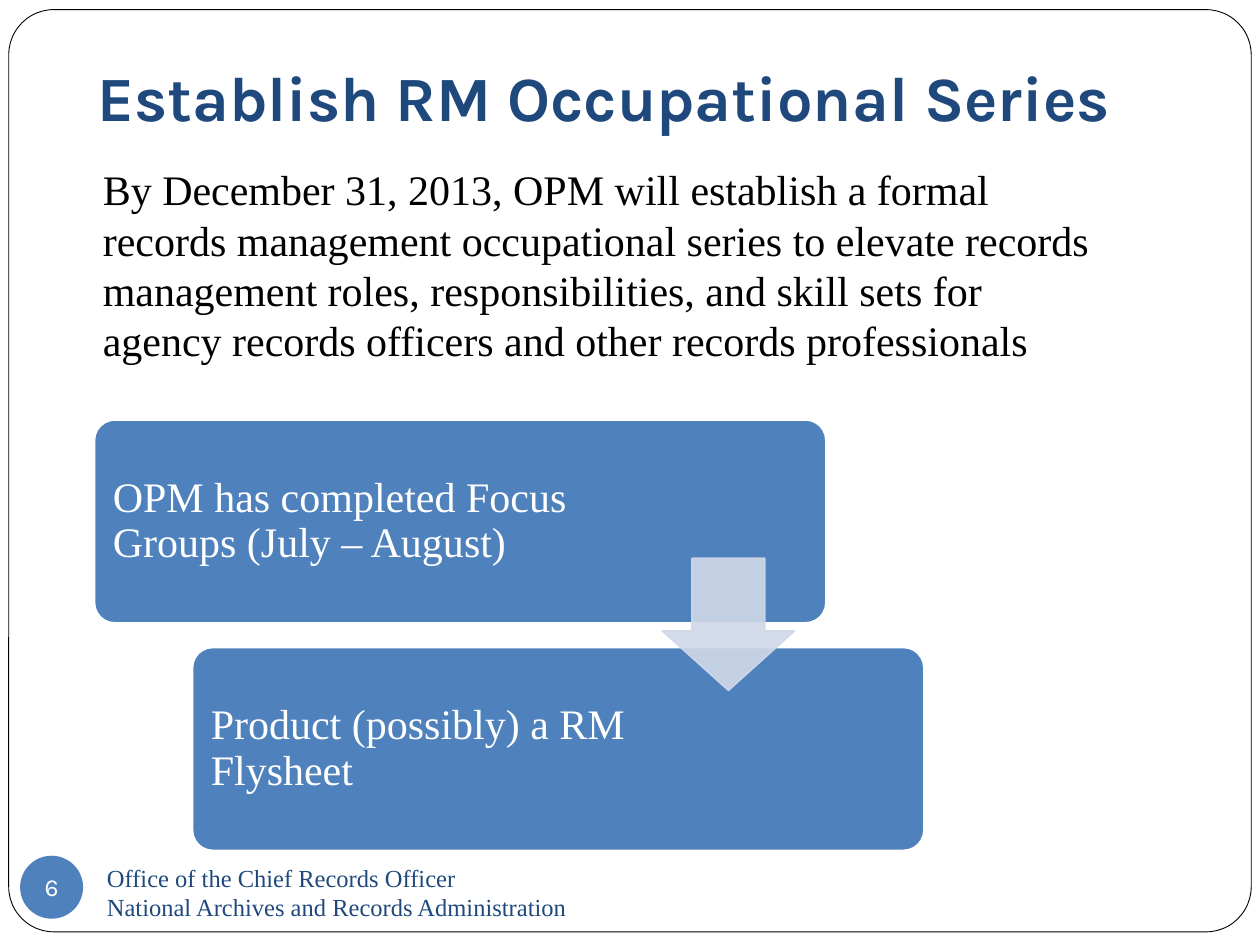
import pptx
import pptx.dml.color
import pptx.enum.shapes
import pptx.enum.text
import pptx.oxml
import pptx.oxml.ns
import pptx.util

Pt = pptx.util.Pt
RGBColor = pptx.dml.color.RGBColor
SHAPE = pptx.enum.shapes.MSO_SHAPE
ANCHOR = pptx.enum.text.MSO_ANCHOR
ALIGN = pptx.enum.text.PP_ALIGN

NAVY = RGBColor(0x1F, 0x49, 0x7D)
BLUE = RGBColor(0x4F, 0x81, 0xBD)
PALE = RGBColor(0xD0, 0xD8, 0xE8)
WHITE = RGBColor(0xFF, 0xFF, 0xFF)
BLACK = RGBColor(0, 0, 0)
SERIF = "Times New Roman"
SANS = "Karla"

deck = pptx.Presentation()
deck.slide_width, deck.slide_height = Pt(720), Pt(540)
page = deck.slides.add_slide(deck.slide_layouts[6])


def add_figure(kind, bounds, fill, line=None, width=1, adjust=()):
    figure = page.shapes.add_shape(kind, *map(Pt, bounds))
    figure.shadow.inherit = False
    figure.fill.solid()
    figure.fill.fore_color.rgb = fill
    if line is None:
        figure.line.fill.background()
    else:
        figure.line.color.rgb = line
        figure.line.width = Pt(width)
    for index, value in enumerate(adjust):
        figure.adjustments[index] = value
    return figure


def write(box, lines, size, font, color, frame_format, para_format=None, bold=False):
    """Fill a shape with one paragraph per line, applying the format dicts."""
    frame = box.text_frame
    for name, value in {"word_wrap": True, **frame_format}.items():
        setattr(frame, name, value)
    frame.text = "\n".join(lines)
    for para in frame.paragraphs:
        for name, value in (para_format or {}).items():
            setattr(para, name, value)
        for span in para.runs:
            for name, value in {"size": Pt(size), "name": font, "bold": bold}.items():
                setattr(span.font, name, value)
            span.font.color.rgb = color


# Page frame, title and number
add_figure(SHAPE.ROUNDED_RECTANGLE, (5, 5.5, 710, 527), WHITE, BLACK, 0.5, [0.049])

title = page.shapes.add_textbox(Pt(48.5), Pt(-6), Pt(612), Pt(90))
write(title, ["Establish RM Occupational Series"], 36, SANS, NAVY,
      {"vertical_anchor": ANCHOR.BOTTOM, "margin_bottom": Pt(7.2)}, bold=True)

badge = add_figure(SHAPE.OVAL, (11.5, 489, 36, 36), BLUE)
no_margins = {f"margin_{side}": 0 for side in ("left", "top", "right", "bottom")}
write(badge, ["6"], 14, SANS, WHITE,
      {"vertical_anchor": ANCHOR.MIDDLE, "word_wrap": False, **no_margins},
      {"alignment": ALIGN.CENTER})

# Goal and footer
goal = page.shapes.add_textbox(Pt(30), Pt(90), Pt(612), Pt(360))
write(goal, ["By December 31, 2013, OPM will establish a formal records management "
             "occupational series to elevate records management roles, responsibilities, "
             "and skill sets for agency records officers and other records professionals"],
      24, SERIF, BLACK, {"margin_left": Pt(28.8)}, {"space_before": Pt(5.8)})

footer = page.shapes.add_textbox(Pt(54), Pt(492), Pt(312), Pt(36))
write(footer, ["Office of the Chief Records Officer",
               "National Archives and Records Administration"],
      14, SERIF, NAVY, {"vertical_anchor": ANCHOR.MIDDLE})

# Steps, each one lower and further right
STEP_WIDTH, STEP_HEIGHT = 418, 116
steps = [("OPM has completed Focus Groups (July – August)", 305),
         ("Product (possibly) a RM Flysheet", 269)]
for index, (label, text_width) in enumerate(steps):
    left, top = 54 + 56 * index, 240 + 130 * index
    step = add_figure(SHAPE.ROUNDED_RECTANGLE, (left, top, STEP_WIDTH, STEP_HEIGHT),
                      BLUE, WHITE, 1, [0.1])
    write(step, [label], 24, SERIF, WHITE,
          {"vertical_anchor": ANCHOR.MIDDLE, "margin_left": Pt(7.2),
           "margin_right": Pt(STEP_WIDTH - text_width + 7.2)},
          {"alignment": ALIGN.LEFT, "line_spacing": 0.9})

arrow = add_figure(SHAPE.DOWN_ARROW, (378.5, 319, 75.5, 75.5), PALE, PALE, 1, [0.45, 0.55])
# Down arrow: first adjustment is shaft width, second is head length
arrow.adjustments[0], arrow.adjustments[1] = 0.55, 0.45
for color in arrow._element.spPr.iter(pptx.oxml.ns.qn("a:srgbClr")):
    alpha = pptx.oxml.parse_xml(f'<a:alpha {pptx.oxml.ns.nsdecls("a")} val="90000"/>')
    color.append(alpha)

deck.save("out.pptx")
